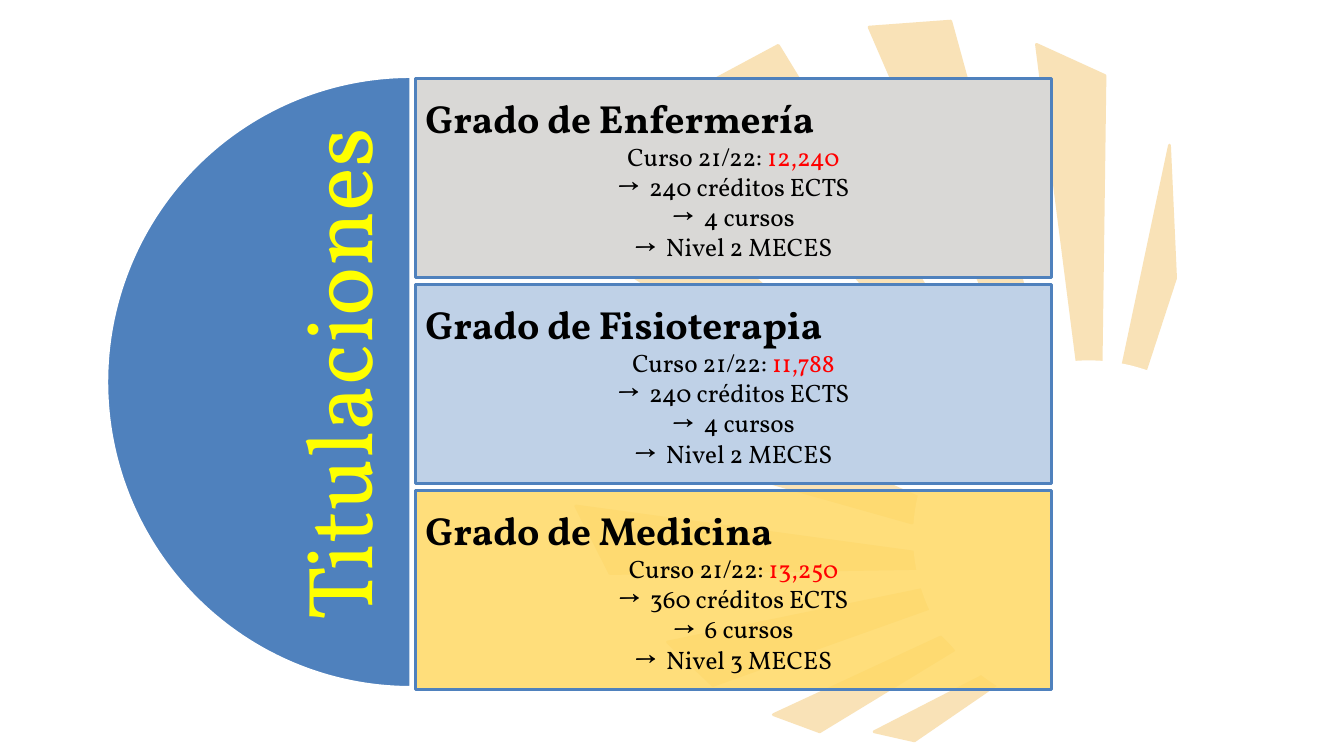
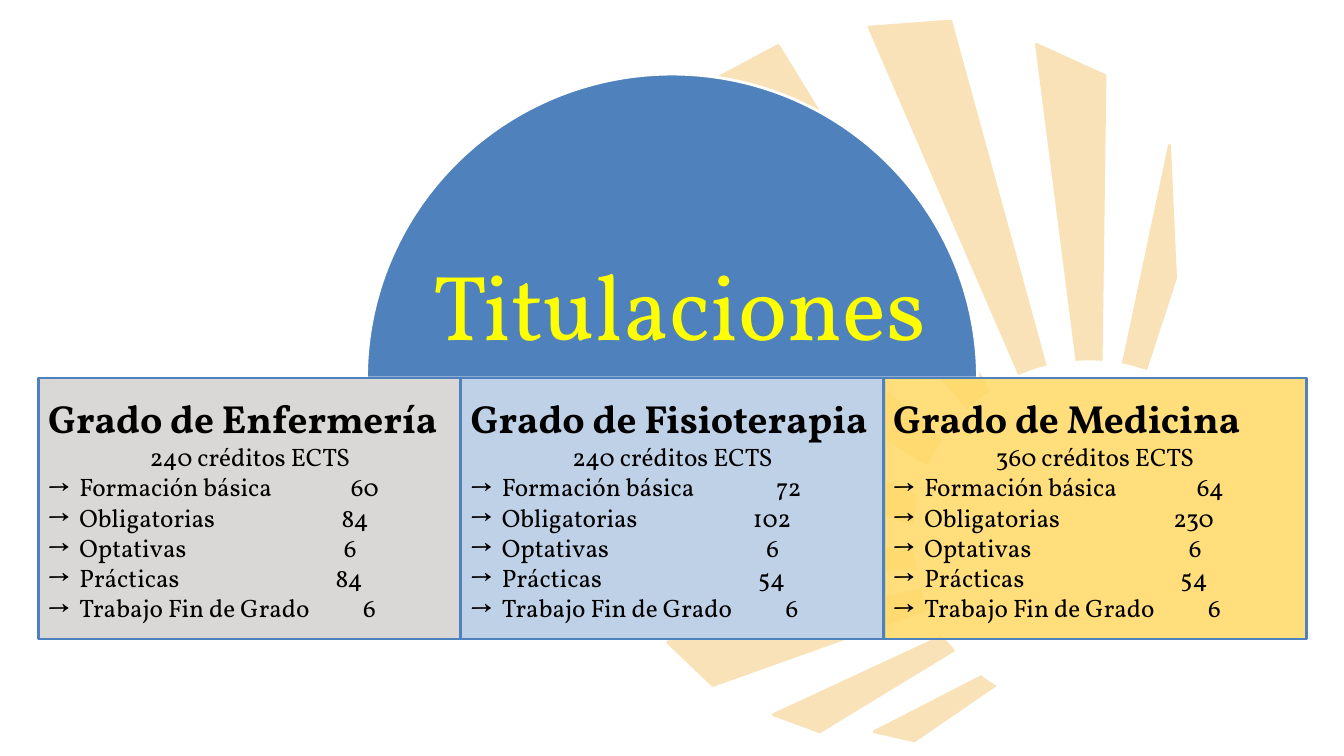
"""Two slides that present the health degrees, their courses and their credits."""
from lxml.etree import SubElement
from pptx import Presentation
from pptx.dml.color import RGBColor
from pptx.enum.shapes import MSO_SHAPE as Shape
from pptx.enum.text import MSO_ANCHOR as Anchor, PP_ALIGN as Align
from pptx.oxml.ns import qn
from pptx.util import Inches, Pt

FONT = "Vollkorn"
COLOURS = {
    "paper": "FFFFFF", "ray": "F9E2B7", "blue": "4F81BD", "title": "FFFF00",
    "text": "000000", "cutoff": "FF0000",
    "grey_card": "D9D8D6", "blue_card": "BFD1E7", "gold_card": "FFD966",
}
TITLE = "Titulaciones"
DEGREES = [
    {"name": "Grado de Enfermería", "fill": "grey_card", "opacity": 100,
     "cutoff": "12,240", "credits": 240, "years": 4, "level": 2,
     "split": (60, 84, 6, 84, 6)},
    {"name": "Grado de Fisioterapia", "fill": "blue_card", "opacity": 100,
     "cutoff": "11,788", "credits": 240, "years": 4, "level": 2,
     "split": (72, 102, 6, 54, 6)},
    {"name": "Grado de Medicina", "fill": "gold_card", "opacity": 86,
     "cutoff": "13,250", "credits": 360, "years": 6, "level": 3,
     "split": (64, 230, 6, 54, 6)},
]
SUBJECTS = [
    ("Formación básica", 3.28), ("Obligatorias", 3.18), ("Optativas", 3.06),
    ("Prácticas", 3.12), ("Trabajo Fin de Grado", 3.25),
]
RAYS = [
    [(5.71, 2.38), (6.18, 1.62), (9.35, 4.38), (9.19, 4.6)],
    [(5.51, 4.19), (5.55, 3.36), (9.12, 4.94), (9.05, 5.19)],
    [(5.71, 5.02), (6.05, 5.69), (9.1, 5.64), (9.08, 5.48)],
    [(6.62, 6.37), (7.07, 6.8), (9.23, 6.03), (9.14, 5.85)],
    [(7.67, 7.09), (8.13, 7.26), (9.46, 6.45), (9.33, 6.32)],
    [(8.67, 7.26), (9.07, 7.35), (9.9, 6.78), (9.74, 6.71)],
    [(6.9, 0.89), (7.72, 0.45), (9.83, 3.91), (9.61, 4.06)],
    [(8.62, 0.27), (9.43, 0.21), (10.39, 3.71), (10.14, 3.78)],
    [(10.28, 0.44), (10.7, 3.72), (10.92, 3.69), (10.96, 0.75)],
    [(11.6, 1.44), (11.13, 3.66), (11.34, 3.74), (11.66, 2.76)],
]
BULLET_INDENT = 0.31


def colour(name):
    return RGBColor.from_string(COLOURS[name])


def paint(shape, fill, line, opacity=100):
    shape.shadow.inherit = False
    shape.fill.solid()
    shape.fill.fore_color.rgb = colour(fill)
    shape.line.color.rgb = colour(line)
    shape.line.width = Pt(2)
    if opacity < 100:
        srgb = shape.fill._xPr.find(qn("a:solidFill")).find(qn("a:srgbClr"))
        SubElement(srgb, qn("a:alpha"), val=str(opacity * 1000))


def add_preset(slide, preset, box, fill, line, opacity=100, angles=(), rotation=0):
    shape = slide.shapes.add_shape(preset, *map(Inches, box))
    for index, angle in enumerate(angles):
        shape.adjustments[index] = angle
    shape.rotation = rotation
    paint(shape, fill, line, opacity)
    return shape


def write(paragraph, text, size, ink="text", bold=False):
    run = paragraph.add_run()
    run.text = text
    run.font.name = FONT
    run.font.size = Pt(size)
    run.font.bold = bold
    run.font.color.rgb = colour(ink)


def add_arrow_bullet(paragraph, tab=None):
    properties = paragraph._p.get_or_add_pPr()
    properties.set("marL", str(Inches(BULLET_INDENT)))
    properties.set("indent", str(-Inches(BULLET_INDENT)))
    SubElement(properties, qn("a:buFont"), typeface=FONT)
    SubElement(properties, qn("a:buChar"), char="→")
    if tab:
        stops = SubElement(properties, qn("a:tabLst"))
        SubElement(stops, qn("a:tab"), pos=str(Inches(tab)), algn="r")


def add_sun(slide):
    for ray in RAYS:
        outline = slide.shapes.build_freeform(
            *map(Inches, ray[0]), scale=1.0)
        outline.add_line_segments(
            [(Inches(x), Inches(y)) for x, y in ray[1:]], close=True)
        paint(outline.convert_to_shape(), "ray", "ray")
    add_preset(slide, Shape.CHORD, (9.07, 3.59, 3.46, 3.46), "paper", "paper",
               angles=(43.69, 159.32), rotation=35.2)


def add_title(slide, dome_box, dome_rotation, title_box, title_rotation):
    add_preset(slide, Shape.PIE, dome_box, "blue", "paper",
               angles=(54, 162), rotation=dome_rotation)
    title = slide.shapes.add_textbox(*map(Inches, title_box))
    title.rotation = title_rotation
    title.text_frame.word_wrap = False
    heading = title.text_frame.paragraphs[0]
    heading.alignment = Align.CENTER
    write(heading, TITLE, 66, "title")


def add_card(slide, degree, box):
    card = add_preset(slide, Shape.RECTANGLE, box, degree["fill"], "blue",
                      degree["opacity"])
    frame = card.text_frame
    frame.word_wrap = True
    frame.vertical_anchor = Anchor.MIDDLE
    name = frame.paragraphs[0]
    name.alignment = Align.LEFT
    write(name, degree["name"], 28, bold=True)
    return frame


def add_line(frame, text, alignment=Align.CENTER, bullet=False, tab=None):
    paragraph = frame.add_paragraph()
    paragraph.alignment = alignment
    if bullet:
        add_arrow_bullet(paragraph, tab)
    write(paragraph, text, 18)
    return paragraph


def add_slide(deck):
    slide = deck.slides.add_slide(deck.slide_layouts[6])
    add_sun(slide)
    return slide


def build_overview(deck):
    slide = add_slide(deck)
    add_title(slide, (1.06, 0.76, 6.03, 6.06), 0, (0.74, 3.11, 5.19, 1.21), 270)
    for row, degree in enumerate(DEGREES):
        frame = add_card(slide, degree, (4.12, 0.78 + row * 2.045, 6.31, 1.97))
        course = add_line(frame, "Curso 21/22: ")
        write(course, degree["cutoff"], 18, "cutoff")
        for fact in (f"{degree['credits']} créditos ECTS",
                     f"{degree['years']} cursos",
                     f"Nivel {degree['level']} MECES"):
            add_line(frame, fact, bullet=True)


def build_credits(deck):
    slide = add_slide(deck)
    add_title(slide, (3.65, 0.72, 6.03, 6.06), 90, (4.15, 2.41, 5.19, 1.21), 0)
    for column, degree in enumerate(DEGREES):
        frame = add_card(slide, degree, (0.38 + column * 4.19, 3.75, 4.2, 2.59))
        add_line(frame, f"{degree['credits']} créditos ECTS")
        for (subject, tab), amount in zip(SUBJECTS, degree["split"]):
            add_line(frame, f"{subject}\t{amount}", Align.JUSTIFY, True, tab)


def main():
    deck = Presentation()
    deck.slide_width, deck.slide_height = Inches(13.33), Inches(7.5)
    build_overview(deck)
    build_credits(deck)
    deck.save("out.pptx")


if __name__ == "__main__":
    main()
